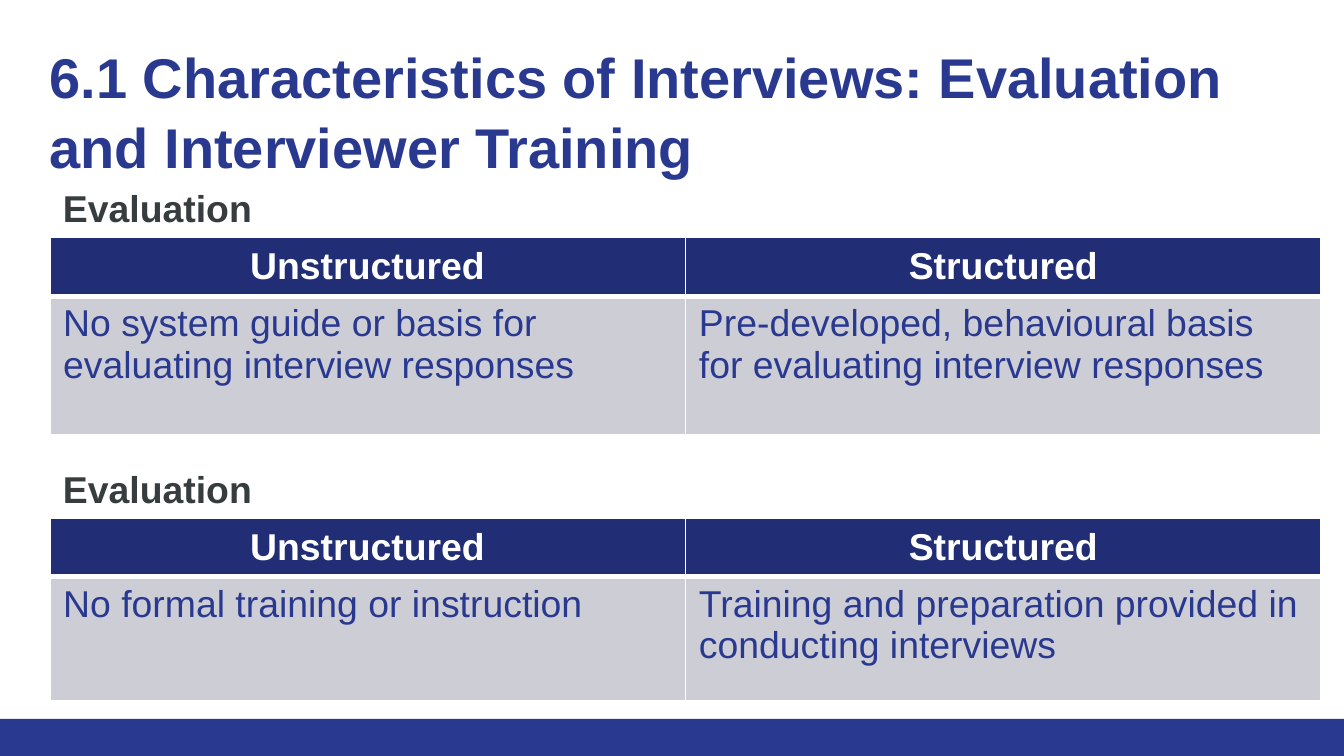
from lxml import etree
from pptx import Presentation
from pptx.dml.color import RGBColor
from pptx.enum.shapes import MSO_SHAPE
from pptx.enum.text import MSO_ANCHOR, PP_ALIGN
from pptx.oxml.ns import qn
from pptx.util import Cm, Pt

RECTANGLE = MSO_SHAPE.RECTANGLE
TOP, MIDDLE = MSO_ANCHOR.TOP, MSO_ANCHOR.MIDDLE
LEFT, CENTER = PP_ALIGN.LEFT, PP_ALIGN.CENTER

TITLE = "6.1 Characteristics of Interviews: Evaluation and Interviewer Training"
HEADINGS = ("Unstructured", "Structured")
SECTIONS = [
    {
        "label": "Evaluation",
        "top": 3.38,
        "body_height": 2.62,
        "answers": (
            "No system guide or basis for evaluating interview responses",
            "Pre-developed, behavioural basis for evaluating interview responses",
        ),
    },
    {
        "label": "Evaluation",
        "top": 8.68,
        "body_height": 2.34,
        "answers": (
            "No formal training or instruction",
            "Training and preparation provided in conducting interviews",
        ),
    },
]

THEME = {
    "font": "Arial",
    "blue": "2A3990",
    "navy": "212D74",
    "grey": "CDCDD6",
    "charcoal": "373D3F",
    "white": "FFFFFF",
    "title_size": 30,
    "text_size": 20,
}

SLIDE_WIDTH, SLIDE_HEIGHT = 25.4, 14.29
FOOTER_HEIGHT = 0.7
CONTENT_LEFT, CONTENT_WIDTH = 0.94, 24.03
LABEL_WIDTH, LABEL_HEIGHT = 20.57, 1.11
HEADER_HEIGHT = 1.11

TITLE_FORMAT = {"size": Pt(THEME["title_size"]), "bold": True}
LABEL_FORMAT = {"size": Pt(THEME["text_size"]), "bold": True}
BODY_FORMAT = {"size": Pt(THEME["text_size"]), "bold": False}

ROW_STYLES = [
    {
        "fill": "navy", "color": "white", "format": LABEL_FORMAT,
        "align": CENTER, "anchor": MIDDLE,
        "borders": {"lnL": 1, "lnR": 1, "lnT": 1, "lnB": 3},
    },
    {
        "fill": "grey", "color": "blue", "format": BODY_FORMAT,
        "align": LEFT, "anchor": TOP,
        "borders": {"lnL": 1, "lnR": 1, "lnT": 3, "lnB": 1},
    },
]


def color_of(name):
    return RGBColor.from_string(THEME[name])


def write(frame, text, color, font_format, align=LEFT):
    para = frame.paragraphs[0]
    para.alignment = align
    span = para.add_run()
    span.text = text
    span.font.name = THEME["font"]
    span.font.color.rgb = color_of(color)
    for name, value in font_format.items():
        setattr(span.font, name, value)
    return para


def add_text(page, area, text, color, font_format):
    box = page.shapes.add_textbox(*map(Cm, area))
    box.text_frame.word_wrap = True
    return box, write(box.text_frame, text, color, font_format)


def set_borders(cell, widths):
    properties = cell._tc.get_or_add_tcPr()
    for position, (side, width) in enumerate(widths.items()):
        line = etree.Element(qn(f"a:{side}"), w=str(Pt(width)))
        fill = etree.SubElement(line, qn("a:solidFill"))
        etree.SubElement(fill, qn("a:srgbClr"), val=THEME["white"])
        properties.insert(position, line)


def add_comparison(page, section):
    table_top = section["top"] + LABEL_HEIGHT
    heights = (HEADER_HEIGHT, section["body_height"])
    rows = (HEADINGS, section["answers"])
    area = (CONTENT_LEFT, table_top, CONTENT_WIDTH, sum(heights))
    table = page.shapes.add_table(len(rows), len(HEADINGS), *map(Cm, area)).table
    for column in table.columns:
        column.width = Cm(CONTENT_WIDTH / len(HEADINGS))
    for row_index, (texts, height, style) in enumerate(zip(rows, heights, ROW_STYLES)):
        table.rows[row_index].height = Cm(height)
        for column_index, text in enumerate(texts):
            cell = table.cell(row_index, column_index)
            cell.fill.solid()
            cell.fill.fore_color.rgb = color_of(style["fill"])
            cell.vertical_anchor = style["anchor"]
            set_borders(cell, style["borders"])
            write(cell.text_frame, text, style["color"], style["format"], style["align"])


def main():
    deck = Presentation()
    deck.slide_width, deck.slide_height = Cm(SLIDE_WIDTH), Cm(SLIDE_HEIGHT)
    page = deck.slides.add_slide(deck.slide_layouts[6])

    footer_area = (0, SLIDE_HEIGHT - FOOTER_HEIGHT, SLIDE_WIDTH, FOOTER_HEIGHT)
    footer = page.shapes.add_shape(RECTANGLE, *map(Cm, footer_area))
    footer.shadow.inherit = False
    footer.fill.solid()
    footer.fill.fore_color.rgb = color_of("blue")
    footer.line.fill.background()

    title_area = (0.69, 0.51, 23.37, 2.26)
    title, para = add_text(page, title_area, TITLE, "blue", TITLE_FORMAT)
    para.line_spacing = 1.04
    for side in ("left", "top", "right", "bottom"):
        setattr(title.text_frame, f"margin_{side}", Cm(0.25))

    for section in SECTIONS:
        label_area = (CONTENT_LEFT, section["top"], LABEL_WIDTH, LABEL_HEIGHT)
        add_text(page, label_area, section["label"], "charcoal", LABEL_FORMAT)
        add_comparison(page, section)

    deck.save("out.pptx")


if __name__ == "__main__":
    main()
